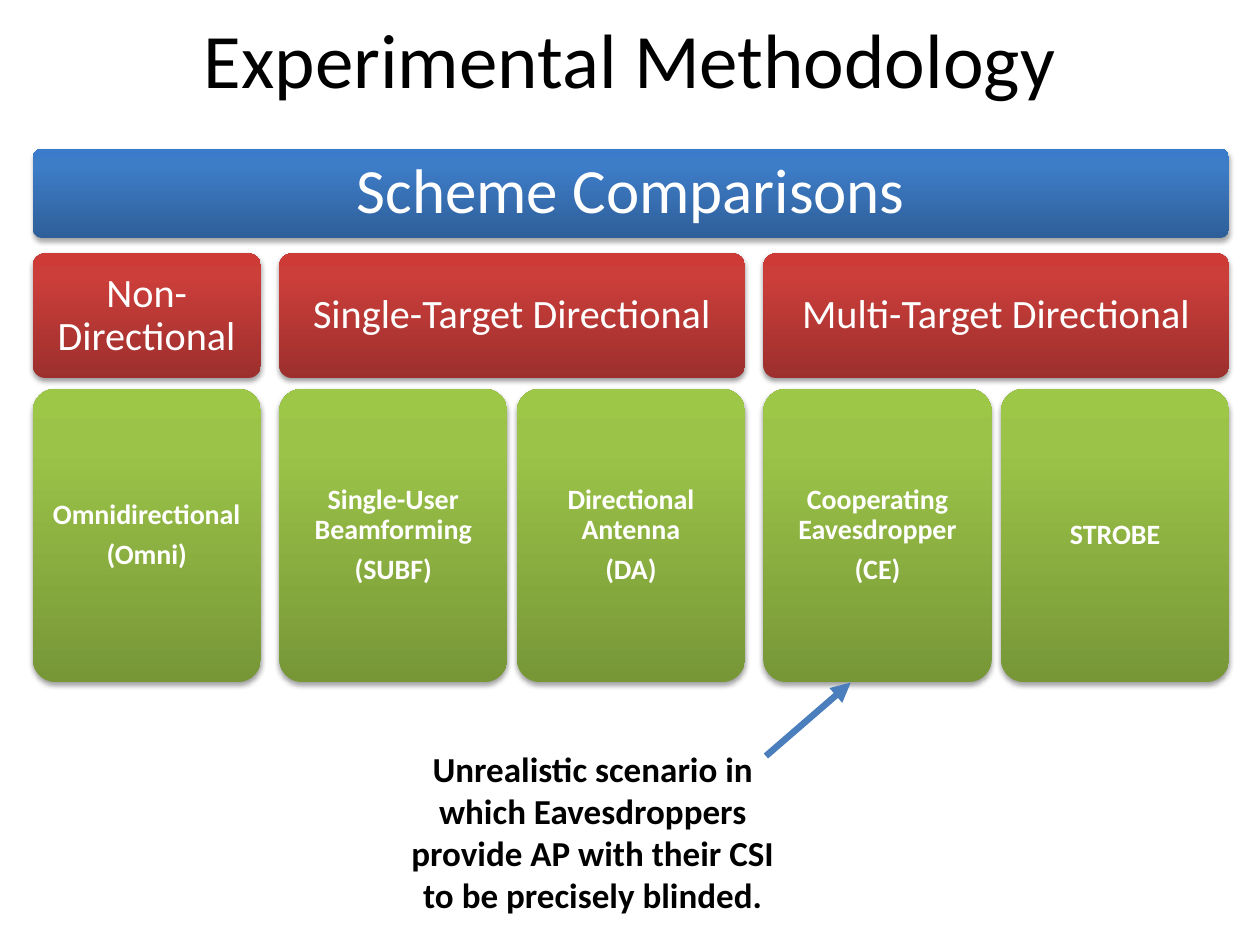
from copy import deepcopy

from lxml.etree import SubElement
from pptx import Presentation
from pptx.dml.color import RGBColor
from pptx.enum.shapes import MSO_CONNECTOR as Connector, MSO_SHAPE as Shape
from pptx.enum.text import MSO_ANCHOR as Anchor, PP_ALIGN as Align
from pptx.oxml.ns import qn
from pptx.util import Cm, Pt

THEME = {
    "font": "Calibri",
    "ink": "000000",
    "light": "FFFFFF",
    "arrow": "4B7EBC",
    "title_size": 44,
    "note_size": 20,
    # Gradients run from bottom to top; shadow is opacity %, distance in pt.
    "root": {"gradient": ("2F5F99", "3D7CC7", "3A7CCB"), "shadow": (35, 1.8),
             "size": 36, "bold": False, "inset": 0.38},
    "group": {"gradient": ("9C2F2D", "CB3E3A", "CE3B37"), "shadow": (38, 1.6),
              "size": 23, "bold": False, "inset": 0.25},
    "leaf": {"gradient": ("779737", "9BC348", "9DC746"), "shadow": (38, 1.6),
             "size": 16, "bold": True, "inset": 0.18},
}
STOPS = (0, 0.8, 1)

GROUPS = [
    ("Non-Directional", [("Omnidirectional", "(Omni)")]),
    ("Single-Target Directional", [("Single-User Beamforming", "(SUBF)"),
                                   ("Directional Antenna", "(DA)")]),
    ("Multi-Target Directional", [("Cooperating Eavesdropper", "(CE)"),
                                  ("STROBE",)]),
]

LEFT, LEAF_WIDTH, LEAF_GAP, GROUP_GAP = 0.66, 4.6, 0.19, 0.37
ROWS = {"root": (3.0, 1.8), "group": (5.11, 2.51), "leaf": (7.84, 5.91)}


def write(frame, lines, size, color, bold=False, **spacing):
    """Fill a text frame with centred paragraphs in one style."""
    frame.word_wrap = True
    for index, line in enumerate(lines):
        para = frame.paragraphs[0] if index == 0 else frame.add_paragraph()
        para.alignment = Align.CENTER
        for name, value in spacing.items():
            setattr(para, name, value)
        span = para.add_run()
        span.text = line
        span.font.color.rgb = RGBColor.from_string(color)
        formats = {"name": THEME["font"], "size": Pt(size), "bold": bold}
        for name, value in formats.items():
            setattr(span.font, name, value)


def add_card(page, kind, left, width, lines):
    """Add a rounded, shaded card of the hierarchy with its text."""
    style = THEME[kind]
    top, height = ROWS[kind]
    card = page.shapes.add_shape(Shape.ROUNDED_RECTANGLE, Cm(left), Cm(top),
                                 Cm(width), Cm(height))
    card.adjustments[0] = 0.1
    card.line.fill.background()

    card.fill.gradient()
    card.fill.gradient_angle = 90
    stop_list = card._element.spPr.find(".//" + qn("a:gsLst"))
    stop_list.append(deepcopy(stop_list[-1]))
    for stop, color, position in zip(card.fill.gradient_stops,
                                     style["gradient"], STOPS):
        stop.color.rgb = RGBColor.from_string(color)
        stop.position = position

    opacity, distance = style["shadow"]
    card.shadow.inherit = False
    effects = card._element.spPr.find(qn("a:effectLst"))
    shadow = SubElement(effects, qn("a:outerShdw"), blurRad=str(Pt(3.1)),
                        dist=str(Pt(distance)), dir="5400000", rotWithShape="0")
    tint = SubElement(shadow, qn("a:srgbClr"), val=THEME["ink"])
    SubElement(tint, qn("a:alpha"), val=str(opacity * 1000))

    frame = card.text_frame
    frame.vertical_anchor = Anchor.MIDDLE
    for side in ("left", "top", "right", "bottom"):
        setattr(frame, "margin_" + side, Cm(style["inset"]))
    write(frame, lines, style["size"], THEME["light"], style["bold"],
          line_spacing=0.9, space_after=Pt(style["size"] * 0.35))
    return card


deck = Presentation()
deck.slide_width, deck.slide_height = Cm(25.4), Cm(19.05)
page = deck.slides.add_slide(deck.slide_layouts[5])

title = page.shapes.title
placing = {"left": Cm(1.27), "top": Cm(0), "width": Cm(22.86), "height": Cm(2.33)}
for name, value in placing.items():
    setattr(title, name, value)
title.text_frame.vertical_anchor = Anchor.MIDDLE
write(title.text_frame, ["Experimental Methodology"], THEME["title_size"], THEME["ink"])

# Leaves set the width of their group, and groups the width of the root.
widths = [len(leaves) * (LEAF_WIDTH + LEAF_GAP) - LEAF_GAP for _, leaves in GROUPS]
total = sum(widths) + GROUP_GAP * (len(GROUPS) - 1)
add_card(page, "root", LEFT, total, ["Scheme Comparisons"])

left = LEFT
for (heading, leaves), width in zip(GROUPS, widths):
    add_card(page, "group", left, width, [heading])
    for index, lines in enumerate(leaves):
        add_card(page, "leaf", left + index * (LEAF_WIDTH + LEAF_GAP),
                 LEAF_WIDTH, lines)
    left += width + GROUP_GAP

note = page.shapes.add_textbox(Cm(7.82), Cm(14.94), Cm(8.26), Cm(3.7))
write(note.text_frame,
      ["Unrealistic scenario in which Eavesdroppers provide AP with their CSI "
       "to be precisely blinded."],
      THEME["note_size"], THEME["ink"], bold=True)

arrow = page.shapes.add_connector(Connector.STRAIGHT, Cm(15.44), Cm(15.24),
                                  Cm(17.15), Cm(13.76))
arrow.line.color.rgb = RGBColor.from_string(THEME["arrow"])
arrow.line.width = Pt(3.75)
SubElement(arrow.line._get_or_add_ln(), qn("a:tailEnd"), type="triangle")
SubElement(arrow._element.spPr, qn("a:effectLst"))

deck.save("out.pptx")
